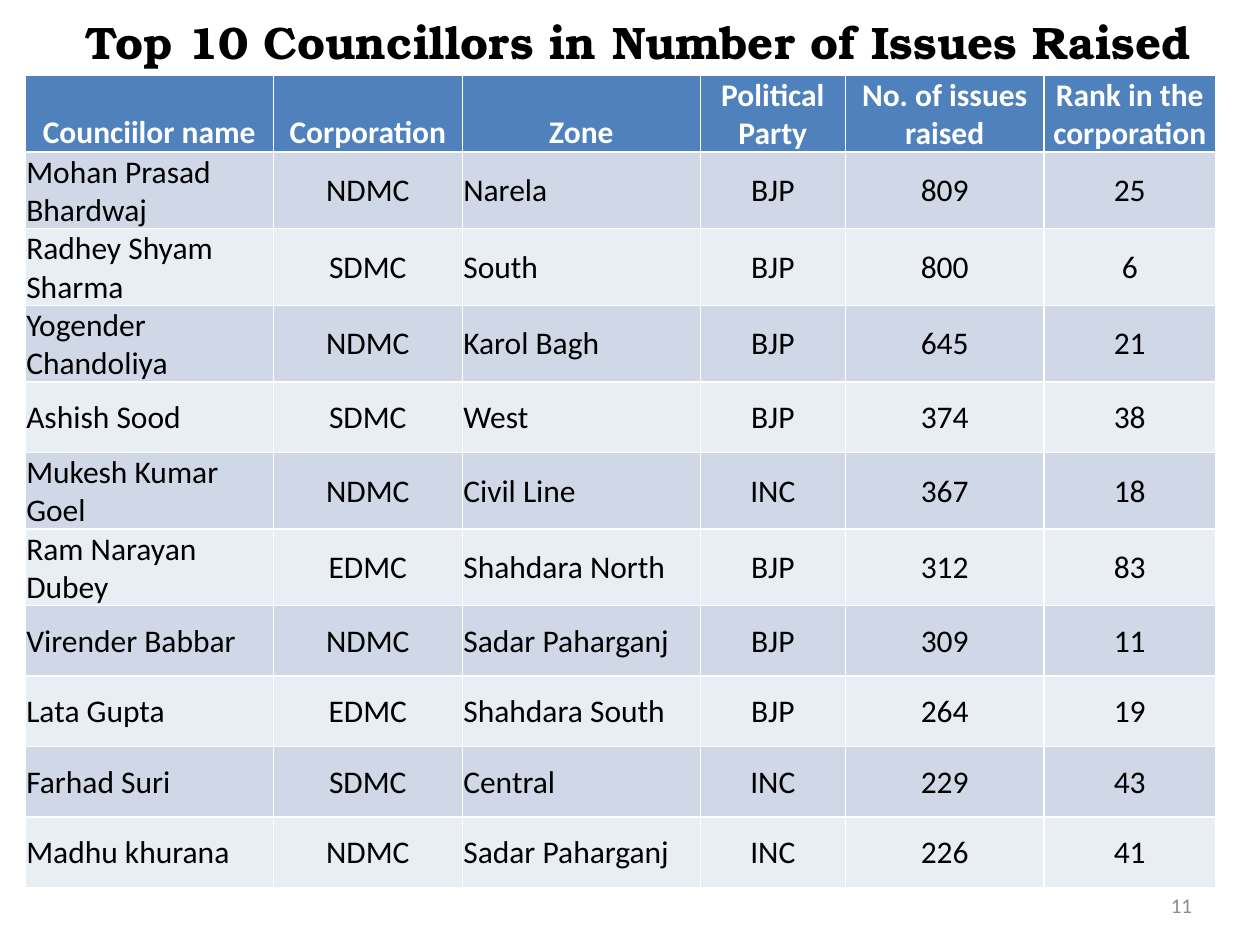
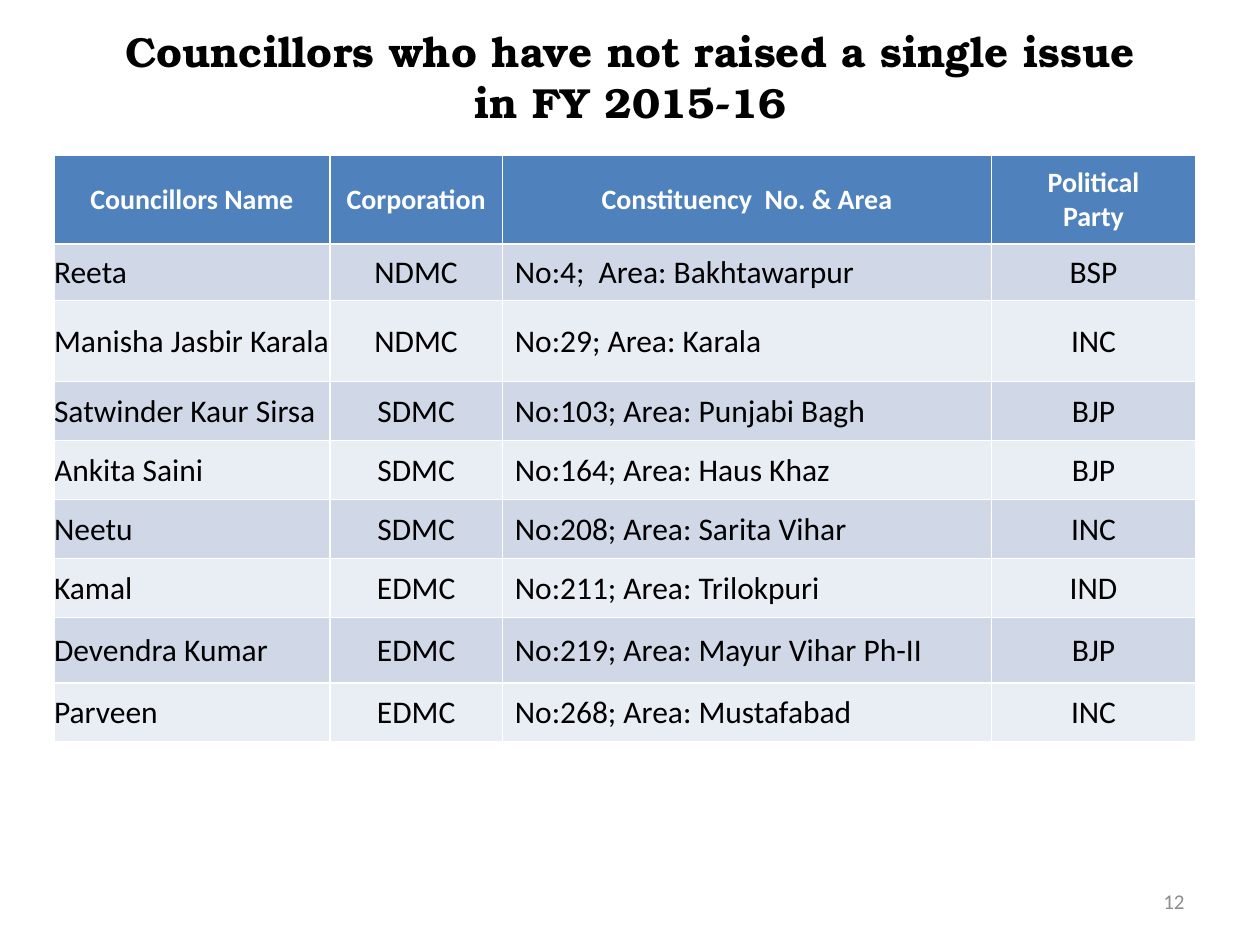
from pptx import Presentation
from pptx.dml.color import RGBColor
from pptx.enum.text import MSO_ANCHOR, MSO_AUTO_SIZE, PP_ALIGN
from pptx.util import Cm, Pt

BLACK = RGBColor(0x00, 0x00, 0x00)
WHITE = RGBColor(0xFF, 0xFF, 0xFF)
GREY = RGBColor(0x8C, 0x8C, 0x8C)
BLUE = RGBColor(0x4F, 0x81, 0xBD)
BANDS = (RGBColor(0xD0, 0xD8, 0xE8), RGBColor(0xE9, 0xED, 0xF4))

HEAD_FONT = "TeX Gyre Bonum"
BODY_FONT = "Calibri"
LEFT, CENTER, RIGHT = PP_ALIGN.LEFT, PP_ALIGN.CENTER, PP_ALIGN.RIGHT
MIDDLE, BOTTOM = MSO_ANCHOR.MIDDLE, MSO_ANCHOR.BOTTOM
FIXED = MSO_AUTO_SIZE.NONE
TITLE_ONLY = 5

ISSUES = [
    ("Counciilor name", "Corporation", "Zone", "Political Party",
     "No. of issues raised", "Rank in the corporation"),
    ("Mohan Prasad Bhardwaj", "NDMC", "Narela", "BJP", "809", "25"),
    ("Radhey Shyam Sharma", "SDMC", "South", "BJP", "800", "6"),
    ("Yogender Chandoliya", "NDMC", "Karol Bagh", "BJP", "645", "21"),
    ("Ashish Sood", "SDMC", "West", "BJP", "374", "38"),
    ("Mukesh Kumar Goel", "NDMC", "Civil Line", "INC", "367", "18"),
    ("Ram Narayan Dubey", "EDMC", "Shahdara North", "BJP", "312", "83"),
    ("Virender Babbar", "NDMC", "Sadar Paharganj", "BJP", "309", "11"),
    ("Lata Gupta", "EDMC", "Shahdara South", "BJP", "264", "19"),
    ("Farhad Suri", "SDMC", "Central", "INC", "229", "43"),
    ("Madhu khurana", "NDMC", "Sadar Paharganj", "INC", "226", "41"),
]

SILENT = [
    ("Councillors Name", "Corporation", "Constituency  No. & Area",
     "Political\nParty"),
    ("Reeta", "NDMC", "No:4;  Area: Bakhtawarpur", "BSP"),
    ("Manisha Jasbir Karala", "NDMC", "No:29; Area: Karala", "INC"),
    ("Satwinder Kaur Sirsa", "SDMC", "No:103; Area: Punjabi Bagh", "BJP"),
    ("Ankita Saini", "SDMC", "No:164; Area: Haus Khaz", "BJP"),
    ("Neetu", "SDMC", "No:208; Area: Sarita Vihar", "INC"),
    ("Kamal", "EDMC", "No:211; Area: Trilokpuri", "IND"),
    ("Devendra Kumar", "EDMC", "No:219; Area: Mayur Vihar Ph-II", "BJP"),
    ("Parveen", "EDMC", "No:268; Area: Mustafabad", "INC"),
]


def style(frame, font, size, color, align, bold=False):
    for para in frame.paragraphs:
        para.alignment = align
        for run in para.runs:
            run.font.name = font
            run.font.size = Pt(size)
            run.font.bold = bold
            run.font.color.rgb = color


def place(shape, box):
    shape.left, shape.top, shape.width, shape.height = map(Cm, box)


def add_title(slide, text, box, size):
    title = slide.shapes.title
    place(title, box)
    frame = title.text_frame
    frame.text = text
    frame.auto_size = FIXED
    frame.vertical_anchor = MIDDLE
    frame.margin_left = frame.margin_right = 0
    style(frame, HEAD_FONT, size, BLACK, CENTER, True)


def add_number(slide, number, left, top):
    frame = slide.shapes.add_textbox(
        Cm(left), Cm(top), Cm(5.92), Cm(1.02)).text_frame
    frame.word_wrap = True
    frame.vertical_anchor = MIDDLE
    frame.text = str(number)
    style(frame, BODY_FONT, 12, GREY, RIGHT)


def add_grid(slide, data, left, top, widths, heights, pads, flush,
             head_size, head_anchor):
    table = slide.shapes.add_table(
        len(data), len(widths), Cm(left), Cm(top),
        Cm(sum(widths)), Cm(sum(heights))).table
    for column, width in zip(table.columns, widths):
        column.width = Cm(width)
    for r, (row, height) in enumerate(zip(data, heights)):
        table.rows[r].height = Cm(height)
        head = r == 0
        for c, text in enumerate(row):
            cell = table.cell(r, c)
            cell.text = text
            cell.fill.solid()
            cell.fill.fore_color.rgb = BLUE if head else BANDS[(r - 1) % 2]
            cell.vertical_anchor = head_anchor if head else MIDDLE
            cell.margin_left = cell.margin_right = Cm(pads[c])
            cell.margin_top = Cm(0.02)
            cell.margin_bottom = 0
            align = LEFT if c in flush and not head else CENTER
            style(cell.text_frame, BODY_FONT, head_size if head else 18,
                  WHITE if head else BLACK, align, head)


def issues_slide(deck):
    slide = deck.slides.add_slide(deck.slide_layouts[TITLE_ONLY])
    add_title(slide, "Top 10 Councillors in Number of Issues Raised",
              (1.45, 0.13, 22.86, 1.4), 26)
    add_number(slide, 11, 18.36, 17.73)
    widths = (5, 3.81, 4.8, 2.92, 4.01, 3.45)
    add_grid(slide, ISSUES, 0.51, 1.52, widths, [1.42] * len(ISSUES),
             [0.02] * len(widths), (0, 2), 18, BOTTOM)


def silent_slide(deck):
    slide = deck.slides.add_slide(deck.slide_layouts[TITLE_ONLY])
    add_title(slide,
              "Councillors who have not raised a single issue\vin FY 2015-16",
              (1.27, 0.76, 22.86, 1.55), 24)
    add_number(slide, 12, 18.21, 17.65)
    heights = (1.8, 1.14, 1.63, 1.19, 1.19, 1.19, 1.19, 1.32, 1.19)
    add_grid(slide, SILENT, 1.09, 3.12, (5.56, 3.48, 9.86, 4.11), heights,
             (0, 0, 0.25, 0), (0, 2), 16, MIDDLE)


def main():
    deck = Presentation()
    deck.slide_width, deck.slide_height = Cm(25.4), Cm(19.05)
    issues_slide(deck)
    silent_slide(deck)
    deck.save("out.pptx")


if __name__ == "__main__":
    main()
